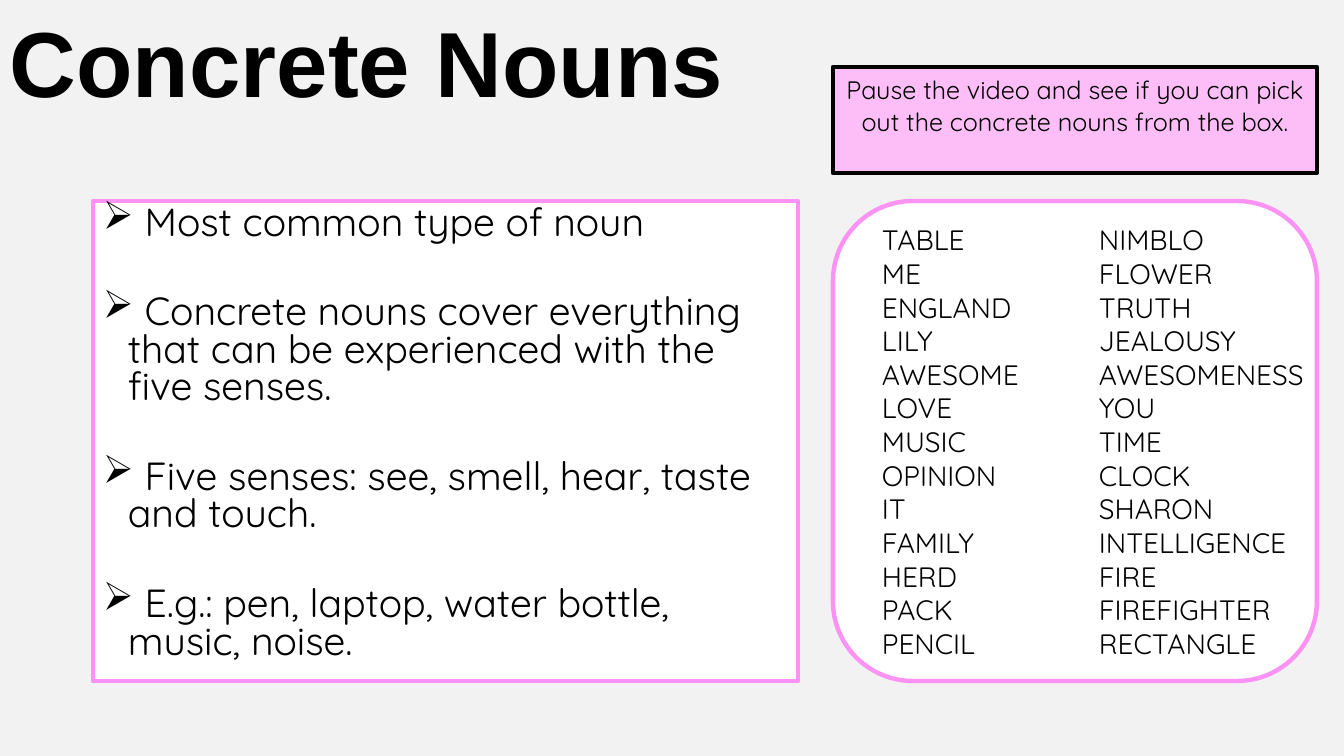
import pptx
import pptx.util
import pptx.dml.color
import pptx.enum.shapes
import pptx.enum.text
import pptx.oxml
import pptx.oxml.ns

TITLE = "Concrete Nouns"
FACTS = [
    "Most common type of noun",
    "Concrete nouns cover everything that can be experienced with the five senses.",
    "Five senses: see, smell, hear, taste and touch.",
    "E.g.: pen, laptop, water bottle, music, noise.",
]
TASK = "Pause the video and see if you can pick out the concrete nouns from the box."
WORDS = [
    ["TABLE", "ME", "ENGLAND", "LILY", "AWESOME", "LOVE", "MUSIC", "OPINION",
     "IT", "FAMILY", "HERD", "PACK", "PENCIL"],
    ["NIMBLO", "FLOWER", "TRUTH", "JEALOUSY", "AWESOMENESS", "YOU", "TIME", "CLOCK",
     "SHARON", "INTELLIGENCE", "FIRE", "FIREFIGHTER", "RECTANGLE"],
]

PX = 914400 / 100.8
PANEL_TOP, PANEL_HEIGHT = 201, 480
RIGHT_LEFT, RIGHT_WIDTH = 833, 484
WORDS_LEFT, WORDS_TOP, COLUMN_STEP = 872, 218, 217
BLACK, WHITE, PINK, PALE_PINK, GREY = "000000", "FFFFFF", "FC92F4", "FDBEF8", "F2F2F2"
SHAPES = pptx.enum.shapes.MSO_SHAPE
ALIGN = pptx.enum.text.PP_ALIGN
ANCHOR = pptx.enum.text.MSO_ANCHOR


def px(length):
    return round(length * PX)


def colour(value):
    return pptx.dml.color.RGBColor.from_string(value)


def add_panel(kind, left, top, width, height, fill, line):
    panel = slide.shapes.add_shape(kind, px(left), px(top), px(width), px(height))
    panel.shadow.inherit = False
    panel.fill.solid()
    panel.fill.fore_color.rgb = colour(fill)
    panel.line.color.rgb = colour(line)
    panel.line.width = pptx.util.Pt(3.15)
    return panel


def add_box(left, top, width, height):
    return slide.shapes.add_textbox(px(left), px(top), px(width), px(height))


def add_bullet(paragraph, indent):
    properties = paragraph._p.get_or_add_pPr()
    properties.set("marL", str(px(indent)))
    properties.set("indent", str(-px(indent)))
    bullet = pptx.oxml.parse_xml(
        f'<a:buChar {pptx.oxml.ns.nsdecls("a")} char="➢"/>')
    properties.append(bullet)


def write(shape, lines, size, font="Quicksand", bold=False, align=ALIGN.LEFT,
          anchor=ANCHOR.TOP, spacing=1.0, before=0, after=0, bulleted=False):
    frame = shape.text_frame
    frame.word_wrap = True
    frame.vertical_anchor = anchor
    for index, line in enumerate(lines):
        paragraph = frame.paragraphs[0] if index == 0 else frame.add_paragraph()
        paragraph.alignment = align
        paragraph.line_spacing = spacing
        paragraph.space_before = pptx.util.Pt(before if index else 0)
        paragraph.space_after = pptx.util.Pt(after)
        if bulleted:
            add_bullet(paragraph, 25)
        run = paragraph.add_run()
        run.text = f" {line}" if bulleted else line
        run.font.name = font
        run.font.size = pptx.util.Pt(size)
        run.font.bold = bold
        run.font.color.rgb = colour(BLACK)


deck = pptx.Presentation()
deck.slide_width, deck.slide_height = px(1344), px(756)
slide = deck.slides.add_slide(deck.slide_layouts[6])
slide.background.fill.solid()
slide.background.fill.fore_color.rgb = colour(GREY)

write(add_box(0, 0, 1344, 135), [TITLE], 66, font="Arial", bold=True,
      anchor=ANCHOR.MIDDLE, spacing=0.9)

facts = add_panel(SHAPES.RECTANGLE, 93, PANEL_TOP, 705, PANEL_HEIGHT, WHITE, PINK)
write(facts, FACTS, 28, spacing=0.8, before=37, bulleted=True)

add_panel(SHAPES.ROUNDED_RECTANGLE, RIGHT_LEFT, PANEL_TOP, RIGHT_WIDTH, PANEL_HEIGHT,
          WHITE, PINK)
for column, words in enumerate(WORDS):
    word_list = add_box(WORDS_LEFT + column * COLUMN_STEP, WORDS_TOP, 237, 447)
    write(word_list, words, 20)

task = add_panel(SHAPES.RECTANGLE, RIGHT_LEFT, 67, RIGHT_WIDTH, 106, PALE_PINK, BLACK)
write(task, [TASK], 18, align=ALIGN.CENTER, spacing=1.07, after=8)

deck.save("out.pptx")
